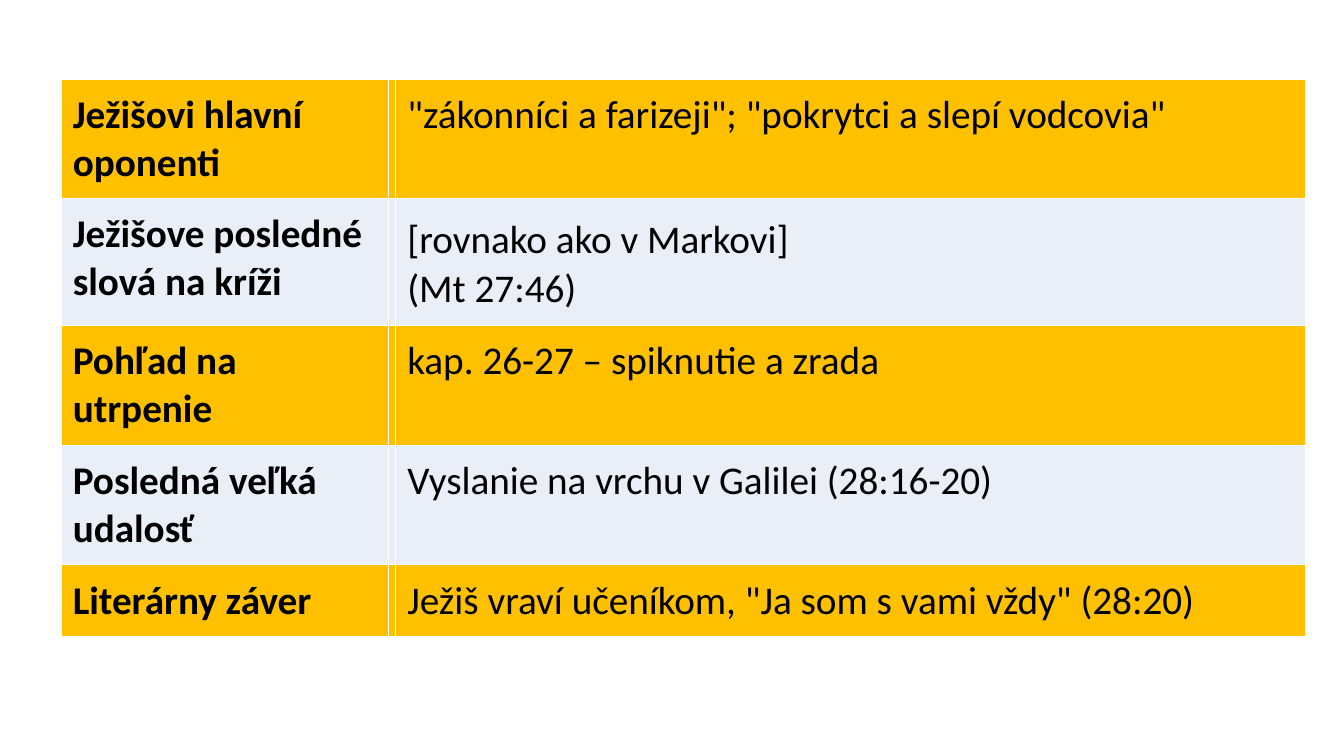
from pptx import Presentation
from pptx.dml.color import RGBColor as RGB
from pptx.oxml import parse_xml
from pptx.oxml.ns import nsdecls
from pptx.util import Pt

FONT = "Calibri"
SIZE, BREAK_SIZE = 28, 32
COLORS = {"gold": "FFC000", "pale": "EAEFF7", "text": "000000", "border": "FFFFFF"}
ROWS = [
    ("Ježišovi hlavní oponenti", ['"zákonníci a farizeji"; "pokrytci a slepí vodcovia"']),
    ("Ježišove posledné slová na kríži", ["[rovnako ako v Markovi]", "(Mt 27:46)"]),
    ("Pohľad na utrpenie", ["kap. 26-27 – spiknutie a zrada"]),
    ("Posledná veľká udalosť", ["Vyslanie na vrchu v Galilei (28:16-20)"]),
    ("Literárny záver", ['Ježiš vraví učeníkom, "Ja som s vami vždy" (28:20)']),
]
LEFT, TOP = 43.5, 56.5
COL_WIDTHS = [234, 5, 650]
ROW_HEIGHTS = [85.5, 90.5, 85.5, 85.5, 51]
INSET = 8.5


def add_run(p, text, bold, size=SIZE):
    r = p.add_run()
    r.text = text
    r.font.name = FONT
    r.font.size = Pt(size)
    r.font.bold = bold
    r.font.color.rgb = RGB.from_string(COLORS["text"])


def write_lines(cell, lines, bold):
    p = cell.text_frame.paragraphs[0]
    for i, line in enumerate(lines):
        if i:
            add_run(p, " ", bold, BREAK_SIZE)
            p.add_line_break()
        add_run(p, line, bold)


def style_cell(cell, color, inset):
    cell.margin_left = cell.margin_right = Pt(inset)
    cell.margin_top = cell.margin_bottom = Pt(inset)
    tc_pr = cell._tc.get_or_add_tcPr()
    for side in ("lnL", "lnR", "lnT", "lnB"):
        tc_pr.append(parse_xml(
            f'<a:{side} {nsdecls("a")} w="{Pt(1)}"><a:solidFill>'
            f'<a:srgbClr val="{COLORS["border"]}"/></a:solidFill></a:{side}>'))
    cell.fill.solid()
    cell.fill.fore_color.rgb = RGB.from_string(COLORS[color])


prs = Presentation()
prs.slide_width, prs.slide_height = Pt(960), Pt(540)
s = prs.slides.add_slide(prs.slide_layouts[6])
table = s.shapes.add_table(
    len(ROWS), len(COL_WIDTHS), Pt(LEFT), Pt(TOP),
    Pt(sum(COL_WIDTHS)), Pt(sum(ROW_HEIGHTS))).table
table.first_row = table.horz_banding = False
for column, width in zip(table.columns, COL_WIDTHS):
    column.width = Pt(width)
for i, (label, lines) in enumerate(ROWS):
    row = table.rows[i]
    row.height = Pt(ROW_HEIGHTS[i])
    for cell, inset in zip(row.cells, (INSET, 0, INSET)):
        style_cell(cell, "pale" if i % 2 else "gold", inset)
    write_lines(row.cells[0], [label], True)
    write_lines(row.cells[2], lines, False)

prs.save("out.pptx")
